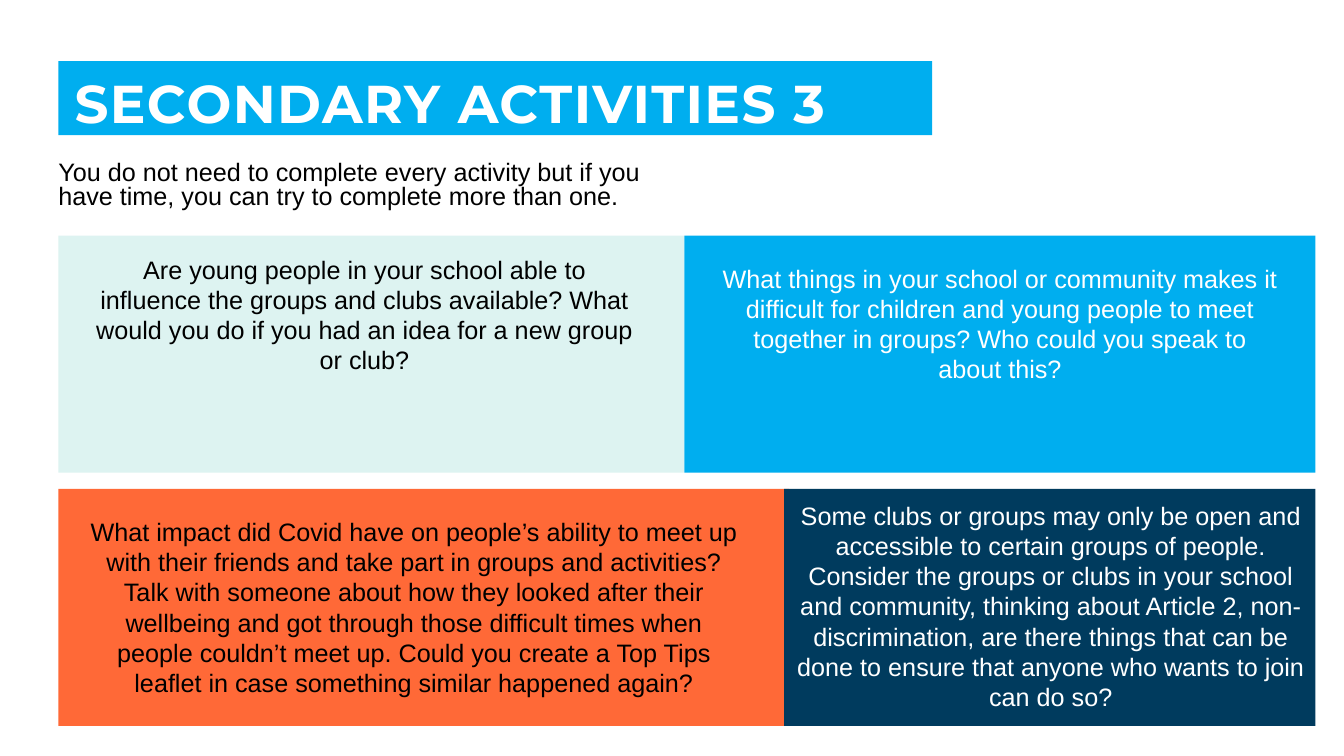
from pptx import Presentation
from pptx.dml.color import RGBColor
from pptx.enum.shapes import MSO_SHAPE as SHAPE
from pptx.enum.text import MSO_ANCHOR as ANCHOR, PP_ALIGN as ALIGN
from pptx.util import Cm, Pt

BLUE, MINT, ORANGE, NAVY = "00AEEF", "DDF3F1", "FF6937", "003B5E"
BLACK, WHITE = "000000", "FFFFFF"
LEFT, CARD_HEIGHT = 1.47, 5.97
TOP_ROW, BOTTOM_ROW = 5.94, 12.32

CARDS = [
    ((LEFT, TOP_ROW, 15.77), MINT, (2.01, 6.27, 14.35, 3.33), BLACK,
     "Are young people in your school able to influence the groups and clubs "
     "available? What would you do if you had an idea for a new group or club?"),
    ((LEFT, BOTTOM_ROW, 18.42), ORANGE, (2.01, 12.88, 16.84, 4.88), BLACK,
     "What impact did Covid have on people’s ability to meet up with their "
     "friends and take part in groups and activities? Talk with someone about "
     "how they looked after their wellbeing and got through those difficult "
     "times when people couldn’t meet up. Could you create a Top Tips leaflet "
     "in case something similar happened again?"),
    ((17.25, TOP_ROW, 15.9), BLUE, (17.86, 6.5, 14.68, 3.33), WHITE,
     "What things in your school or community makes it difficult for children "
     "and young people to meet together in groups? Who could you speak to about "
     "this?"),
    ((19.76, BOTTOM_ROW, 13.39), NAVY, (19.76, 12.47, 13.44, 5.64), WHITE,
     "Some clubs or groups may only be open and accessible to certain groups of "
     "people. Consider the groups or clubs in your school and community, "
     "thinking about Article 2, non-discrimination, are there things that can "
     "be done to ensure that anyone who wants to join can do so?"),
]


def rgb(color):
    return RGBColor.from_string(color)


def add_panel(s, box, fill):
    sp = s.shapes.add_shape(SHAPE.RECTANGLE, *map(Cm, box))
    sp.shadow.inherit = False
    sp.fill.solid()
    sp.fill.fore_color.rgb = rgb(fill)
    sp.line.fill.background()
    return sp


def write(sp, text, size=18, font="Arial", color=BLACK, bold=False,
          align=ALIGN.LEFT, anchor=ANCHOR.TOP, line=1.0, tracking=0,
          insets=(0.25, 0.13, 0.25, 0.13)):
    tf = sp.text_frame
    tf.word_wrap = True
    tf.vertical_anchor = anchor
    tf.margin_left, tf.margin_top, tf.margin_right, tf.margin_bottom = map(Cm, insets)
    p = tf.paragraphs[0]
    p.alignment = align
    p.line_spacing = line
    r = p.add_run()
    r.text = text
    r.font.size = Pt(size)
    r.font.name = font
    r.font.bold = bold
    r.font.color.rgb = rgb(color)
    if tracking:
        r.font._element.set("spc", str(tracking * 100))


def add_text(s, box, text, **fmt):
    write(s.shapes.add_textbox(*map(Cm, box)), text, **fmt)


def main():
    prs = Presentation()
    prs.slide_width, prs.slide_height = Cm(33.87), Cm(19.05)
    s = prs.slides.add_slide(prs.slide_layouts[6])

    banner = add_panel(s, (LEFT, 1.54, 22.02, 1.87), BLUE)
    write(banner, "SECONDARY ACTIVITIES 3", size=38, font="Montserrat",
          color=WHITE, bold=True, anchor=ANCHOR.MIDDLE, line=0.9, tracking=1,
          insets=(0.41, 0.41, 0.3, 0))
    add_text(s, (LEFT, 3.96, 15.77, 1.57),
             "You do not need to complete every activity but if you have time, "
             "you can try to complete more than one.",
             line=0.8, insets=(0, 0.13, 0.25, 0.13))

    for panel, fill, box, color, text in CARDS:
        add_panel(s, (*panel, CARD_HEIGHT), fill)
        add_text(s, box, text, color=color, align=ALIGN.CENTER)

    prs.save("out.pptx")


if __name__ == "__main__":
    main()
